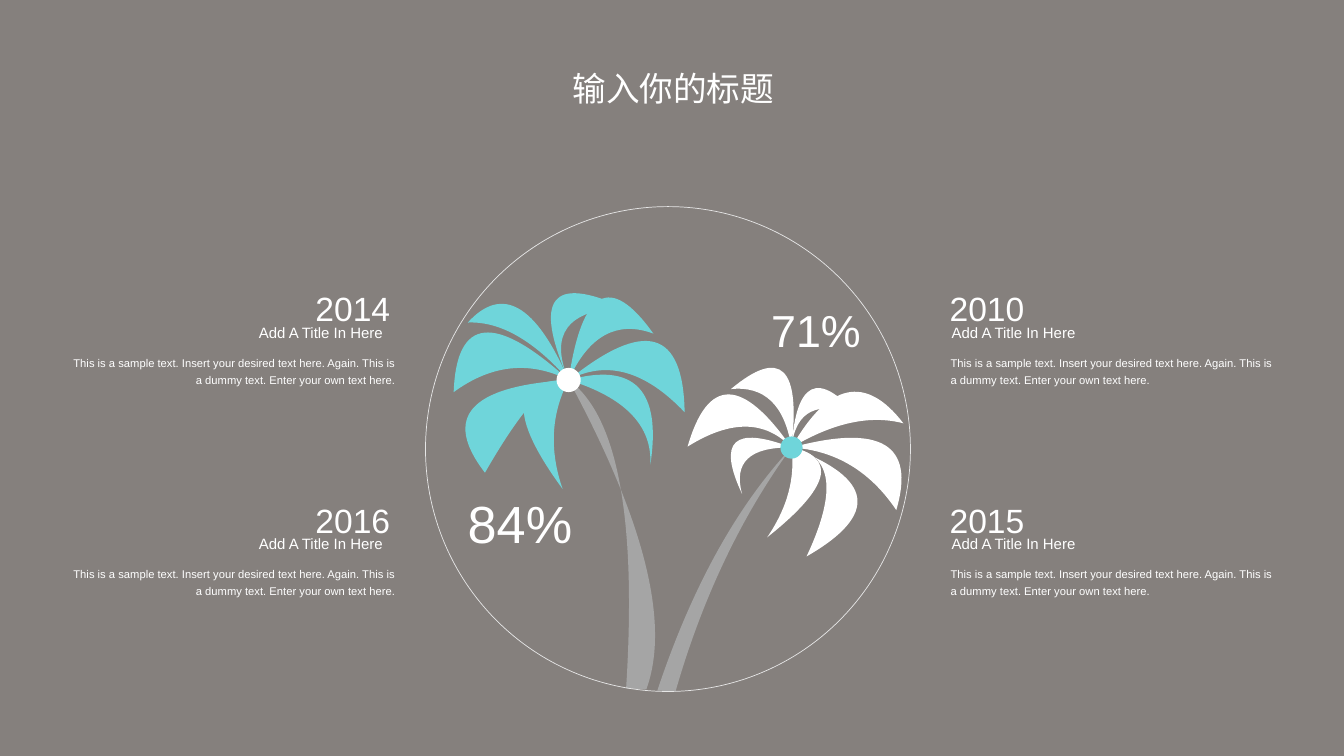
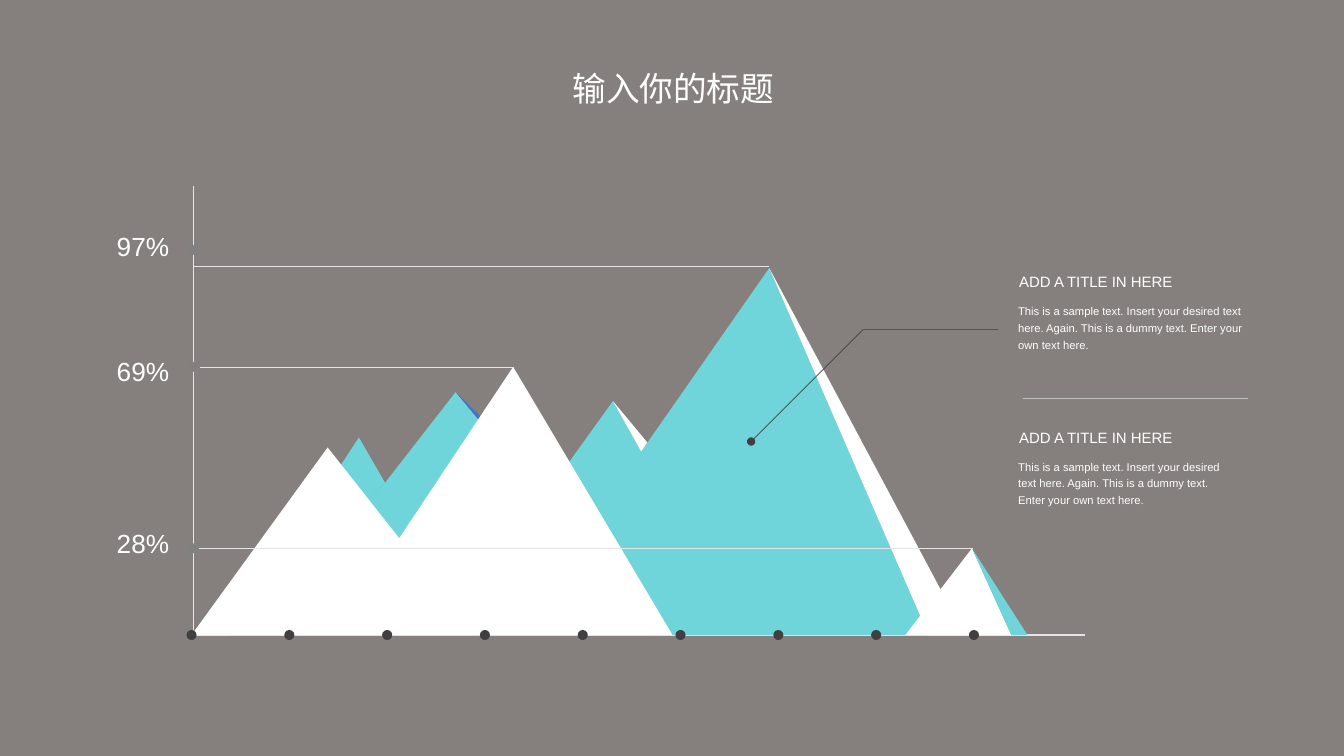
from dataclasses import dataclass
from typing import NamedTuple

from pptx import Presentation
from pptx import util as u
from pptx.dml.color import RGBColor
from pptx.enum import shapes as kinds
from pptx.enum import text as t
from pptx.oxml import ns, xmlchemy
from pptx.slide import Slide

PX = 9144  # EMU; 100 px to the inch

TAUPE = RGBColor(0x85, 0x80, 0x7D)
WHITE = RGBColor(0xFF, 0xFF, 0xFF)
TURQUOISE = RGBColor(0x6F, 0xD5, 0xDA)
TRUNK_GREY = RGBColor(0xA5, 0xA5, 0xA5)
PALE_GREY = RGBColor(0xE6, 0xE6, 0xE6)
RULE_GREY = RGBColor(0xBF, 0xBF, 0xBF)
MID_GREY = RGBColor(0x80, 0x80, 0x80)
CHARCOAL = RGBColor(0x40, 0x40, 0x40)
BLUE = RGBColor(0x44, 0x72, 0xC4)

LATIN = "Arial"
CHINESE = "Noto Sans CJK SC"
HEADING = "输入你的标题"
SAMPLE = ("This is a sample text. Insert your desired text here. Again. "
          "This is a dummy text. Enter your own text here.")
GROUND = 630
DOT = 10

Point = tuple[int, int]
Box = tuple[int, int, int, int]


class Frond(NamedTuple):
    """A leaf from the heart to its tip, with one bend for each edge."""
    bend_out: Point
    tip: Point
    bend_back: Point


class Trunk(NamedTuple):
    left_bend: Point
    left_foot: Point
    right_foot: Point
    right_bend: Point


@dataclass(frozen=True)
class Palm:
    heart: Point
    radius: int
    leaf: RGBColor
    heart_fill: RGBColor
    trunk: Trunk
    fronds: list[Frond]


@dataclass(frozen=True)
class Milestone:
    year: str
    top: int
    on_left: bool


@dataclass(frozen=True)
class Facet:
    """A straight-edged face of a mountain; feet stand on the ground."""
    fill: RGBColor
    ridge: list[Point]
    feet: tuple[int, ...] = ()


@dataclass(frozen=True)
class Level:
    label: str
    label_top: int
    dot_top: int
    line_left: int
    line_right: int
    line_top: int


@dataclass(frozen=True)
class Note:
    top: int
    width: int


PALMS = [
    Palm((564, 377), 12, TURQUOISE, WHITE,
         Trunk((637, 430), (621, 683), (641, 684), (677, 586)),
         [Frond((536, 373), (481, 469), (417, 386)),
          Frond((478, 376), (558, 485), (538, 427)),
          Frond((662, 350), (645, 461), (648, 403)),
          Frond((620, 347), (679, 409), (677, 286)),
          Frond((594, 311), (648, 331), (584, 241)),
          Frond((506, 348), (450, 389), (454, 277)),
          Frond((512, 318), (464, 320), (515, 264)),
          Frond((535, 309), (618, 305), (511, 256))]),
    Palm((785, 444), 11, WHITE, TURQUOISE,
         Trunk((703, 532), (652, 685), (670, 686), (710, 547)),
         [Frond((846, 454), (800, 552), (908, 490)),
          Frond((854, 459), (761, 533), (791, 489)),
          Frond((699, 411), (736, 490), (723, 443)),
          Frond((746, 403), (682, 443), (712, 339)),
          Frond((775, 381), (725, 386), (799, 324)),
          Frond((850, 448), (889, 506), (918, 408)),
          Frond((847, 407), (896, 420), (840, 347)),
          Frond((791, 389), (850, 412), (792, 345))]),
]

MILESTONES = [
    Milestone("2010", 281, False),
    Milestone("2015", 491, False),
    Milestone("2016", 491, True),
    Milestone("2014", 281, True),
]

SUMMIT, MIDDLE, WEST = (763, 266), (608, 398), (452, 389)
MIDDLE_PASS, WEST_PASS = (636, 448), (539, 494)
FOOTHILL = (964, 544)

FACETS = [
    Facet(TURQUOISE, [(382, 479), WEST, WEST_PASS, MIDDLE, MIDDLE_PASS, SUMMIT],
          (921, 228)),
    Facet(TURQUOISE, [(356, 434), (382, 479)], (228,)),
    Facet(WHITE, [SUMMIT], (957, 921)),
    Facet(WHITE, [MIDDLE, (642, 439), MIDDLE_PASS]),
    Facet(BLUE, [WEST, (547, 482), WEST_PASS]),
    Facet(WHITE, [FOOTHILL], (1003, 898)),
    Facet(WHITE, [(325, 444), (396, 534), (509, 364)], (667, 190)),
    Facet(TURQUOISE, [FOOTHILL], (1019, 1003)),
]

LEVELS = [
    Level("28%", 518, 539, 197, 965, 544),
    Level("69%", 348, 359, 198, 510, 364),
    Level("97%", 224, 243, 191, 763, 264),
]

NOTES = [Note(267, 247), Note(421, 238)]


def emu(*lengths: int) -> list[u.Emu]:
    return [u.Emu(length * PX) for length in lengths]


def add_text(shapes, box: Box, content: str, size: float, font: str = LATIN,
             wrap: bool = True, line_pitch: int | None = None, to_right: bool = False) -> None:
    frame = shapes.add_textbox(*emu(*box)).text_frame
    frame.text = content
    frame.word_wrap = wrap
    frame.auto_size = t.MSO_AUTO_SIZE.SHAPE_TO_FIT_TEXT
    paragraph = frame.paragraphs[0]
    if line_pitch:
        paragraph.line_spacing = u.Pt(line_pitch)
    if to_right:
        paragraph.alignment = t.PP_ALIGN.RIGHT
    run = paragraph.runs[0]
    run.font.name = font
    run.font.size = u.Pt(size)
    run.font.color.rgb = WHITE
    east_asian = xmlchemy.OxmlElement("a:ea")
    east_asian.set("typeface", font)
    run.font._element.append(east_asian)


def paint(shape, fill: RGBColor | None = None, line: RGBColor | None = None,
          weight: float = 0.5) -> None:
    shape.shadow.inherit = False
    if fill is None:
        shape.fill.background()
    else:
        shape.fill.solid()
        shape.fill.fore_color.rgb = fill
    if line is None:
        shape.line.fill.background()
    else:
        shape.line.color.rgb = line
        shape.line.width = u.Pt(weight)


def add_oval(shapes, box: Box, fill: RGBColor | None = None,
             line: RGBColor | None = None) -> None:
    paint(shapes.add_shape(kinds.MSO_SHAPE.OVAL, *emu(*box)), fill, line)


def add_outline(shapes, points: list[Point], closed: bool = True):
    builder = shapes.build_freeform(*points[0], scale=PX)
    builder.add_line_segments(points[1:], close=closed)
    return builder.convert_to_shape()


def add_curved(shapes, points: list[Point], fill: RGBColor) -> None:
    """Points alternate between ends and bends; a repeated end is a straight edge."""
    outline = add_outline(shapes, points)
    segments = list(outline._element.iter(ns.qn("a:lnTo")))
    for bend, end in zip(segments[::2], segments[1::2]):
        curve = xmlchemy.OxmlElement("a:quadBezTo")
        bend.addprevious(curve)
        for segment in (bend, end):
            curve.append(segment[0])
            segment.getparent().remove(segment)
    paint(outline, fill)


def add_rule(shapes, left: int, right: int, top: int, color: RGBColor) -> None:
    rule = shapes.add_connector(kinds.MSO_CONNECTOR.STRAIGHT, *emu(left, top, right, top))
    rule.line.color.rgb = color
    rule.line.width = u.Pt(0.5)
    rule._element.spPr.append(xmlchemy.OxmlElement("a:effectLst"))


def add_titled_slide(prs) -> Slide:
    slide = prs.slides.add_slide(prs.slide_layouts[6])
    add_text(slide.shapes, (558, 62, 264, 50), HEADING, 24, CHINESE)
    return slide


def add_palm(shapes, palm: Palm) -> None:
    tree = shapes.add_group_shape().shapes
    trunk = palm.trunk
    add_curved(tree, [palm.heart, trunk.left_bend, trunk.left_foot, trunk.right_foot,
                      trunk.right_foot, trunk.right_bend, palm.heart], TRUNK_GREY)
    for frond in palm.fronds:
        add_curved(tree, [palm.heart, *frond, palm.heart], palm.leaf)
    left, top = (centre - palm.radius for centre in palm.heart)
    add_oval(tree, (left, top, 2 * palm.radius, 2 * palm.radius), palm.heart_fill)


def add_milestone(shapes, item: Milestone) -> None:
    year_left, title_left, body_left = (303, 247, 60) if item.on_left else (932, 934, 933)
    add_text(shapes, (year_left, item.top, 95, 50), item.year, 24, wrap=False)
    add_text(shapes, (body_left, item.top + 64, 342, 44), SAMPLE, 8,
             line_pitch=12, to_right=item.on_left)
    add_text(shapes, (title_left, item.top + 36, 159, 27), "Add A Title In Here", 10.7,
             line_pitch=12)


def build_palm_slide(prs) -> None:
    shapes = add_titled_slide(prs).shapes
    for palm in PALMS:
        add_palm(shapes, palm)
    add_oval(shapes, (422, 205, 481, 481), line=PALE_GREY)
    add_text(shapes, (755, 295, 110, 64), "71%", 32, wrap=False)
    add_text(shapes, (454, 482, 125, 73), "84%", 37.3, wrap=False)
    for item in MILESTONES:
        add_milestone(shapes, item)


def add_callout(shapes) -> None:
    callout = add_outline(shapes, [(745, 438), (856, 327), (990, 327)], closed=False)
    paint(callout, line=CHARCOAL)
    dot_end = xmlchemy.OxmlElement("a:headEnd")
    dot_end.set("type", "oval")
    callout.line._get_or_add_ln().append(dot_end)


def build_mountain_slide(prs) -> None:
    shapes = add_titled_slide(prs).shapes
    axes = add_outline(shapes, [(192, 185), (192, GROUND), (1076, GROUND)], closed=False)
    paint(axes, line=PALE_GREY, weight=1)
    for facet in FACETS:
        feet = [(foot, GROUND) for foot in facet.feet]
        paint(add_outline(shapes, facet.ridge + feet), facet.fill)
    for tick in range(9):
        add_oval(shapes, (185 + 97 * tick, GROUND - DOT // 2, DOT, DOT), CHARCOAL)
    for level in LEVELS:
        add_oval(shapes, (186, level.dot_top, DOT, DOT), MID_GREY)
        add_text(shapes, (106, level.label_top, 73, 42), level.label, 18.7, wrap=False)
        add_rule(shapes, level.line_left, level.line_right, level.line_top, PALE_GREY)
    add_callout(shapes)
    for note in NOTES:
        add_text(shapes, (1000, note.top + 27, note.width, 61), SAMPLE, 8, line_pitch=12)
        add_text(shapes, (1001, note.top, 200, 27), "ADD A TITLE IN HERE", 10.7, line_pitch=12)
    add_rule(shapes, 1015, 1238, 395, RULE_GREY)


def main() -> None:
    prs = Presentation()
    prs.slide_width, prs.slide_height = emu(1333, 750)
    backdrop = prs.slide_master.background.fill
    backdrop.solid()
    backdrop.fore_color.rgb = TAUPE
    build_palm_slide(prs)
    build_mountain_slide(prs)
    prs.save("out.pptx")


if __name__ == "__main__":
    main()
